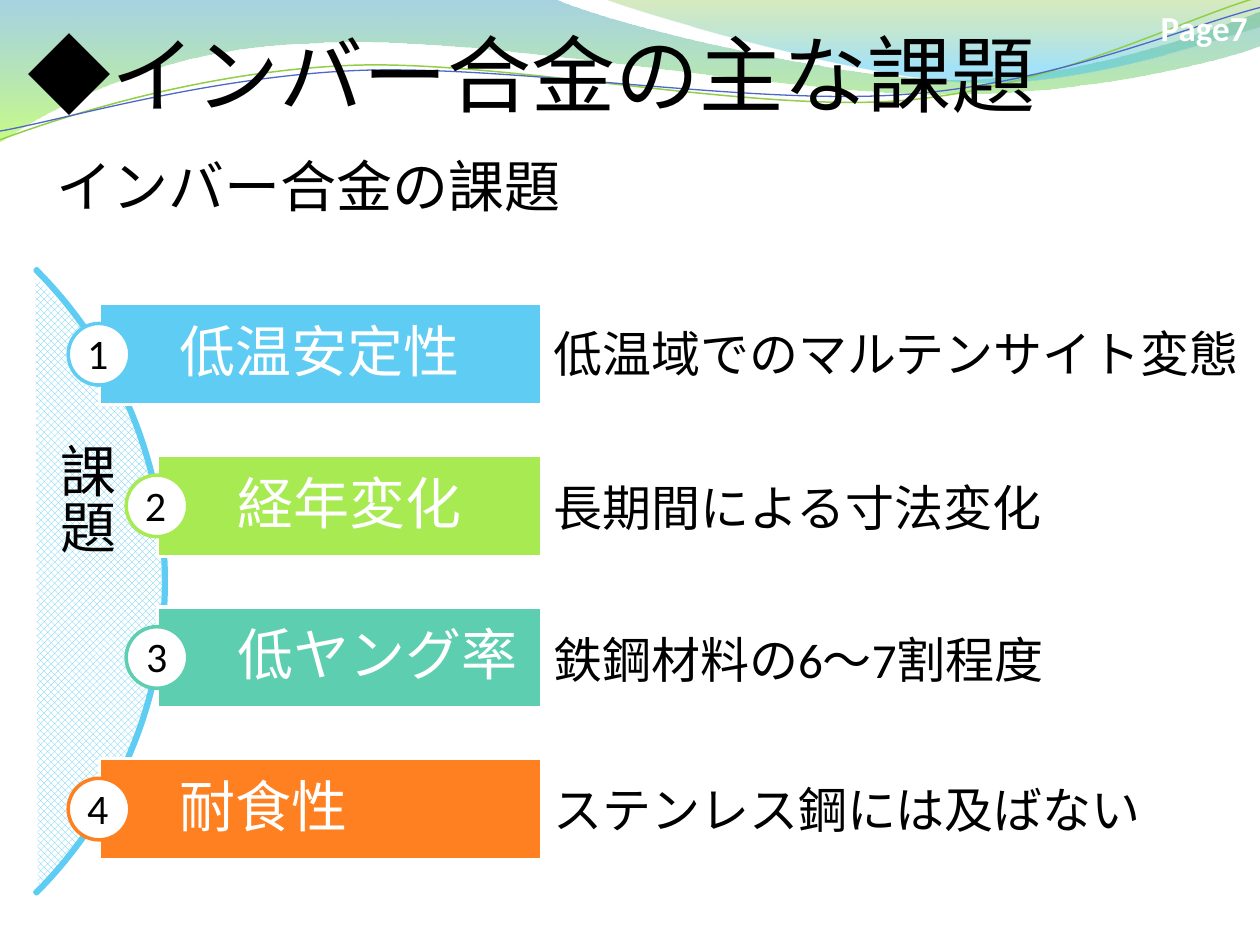
import math
from dataclasses import dataclass

import lxml.etree
import pptx
import pptx.dml.color
import pptx.enum.dml
import pptx.enum.shapes
import pptx.enum.text
import pptx.oxml.ns
import pptx.util

Pt = pptx.util.Pt
RGBColor = pptx.dml.color.RGBColor
MSO_SHAPE = pptx.enum.shapes.MSO_SHAPE
MSO_ANCHOR = pptx.enum.text.MSO_ANCHOR
PP_ALIGN = pptx.enum.text.PP_ALIGN
qn = pptx.oxml.ns.qn

BLACK = RGBColor(0x00, 0x00, 0x00)
WHITE = RGBColor(0xFF, 0xFF, 0xFF)
SKY = RGBColor(0x5E, 0xCC, 0xF3)
LIME = RGBColor(0xA7, 0xEA, 0x52)
MINT = RGBColor(0x5D, 0xCE, 0xAF)
ORANGE = RGBColor(0xFF, 0x80, 0x21)
WAVE_BLUE = RGBColor(0x3B, 0x9C, 0xBF)
WAVE_LIME = RGBColor(0x9C, 0xFA, 0x24)
WAVE_GREEN = RGBColor(0x7E, 0xBE, 0x2C)
WAVE_SKY = RGBColor(0x39, 0xC1, 0xF1)
LINE_GREEN = RGBColor(0x93, 0xCE, 0x48)
LINE_BLUE = RGBColor(0x4E, 0x67, 0xC8)

FONT = "Calibri"
ROW_TOP, ROW_STEP, BAR_HEIGHT, BAR_RIGHT = 173.6, 86.64, 57.7, 309.6
OUTER_LEFT, INNER_LEFT = 56.9, 90
BADGE = 35.2
STRAND_TURN = 357.3


@dataclass(frozen=True)
class Issue:
    name: str
    detail: str
    detail_top: float
    left: float
    number_left: float
    color: RGBColor


@dataclass(frozen=True)
class Stop:
    position: float
    color: RGBColor
    opacity: int


@dataclass(frozen=True)
class Band:
    start: tuple
    segments: tuple
    stops: tuple


@dataclass(frozen=True)
class Strand:
    start: tuple
    segments: tuple
    center: tuple
    color: RGBColor
    width: float


ISSUES = (
    Issue("低温安定性", "低温域でのマルテンサイト変態", 181.4, OUTER_LEFT, 32.4, SKY),
    Issue("経年変化", "長期間による寸法変化", 269.1, INNER_LEFT, 65.5, LIME),
    Issue("低ヤング率", "鉄鋼材料の6～7割程度", 356.4, INNER_LEFT, 66.2, MINT),
    Issue("耐食性", "ステンレス鋼には及ばない", 442.1, OUTER_LEFT, 32.4, ORANGE),
)

BANDS = (
    Band((0, 0), (
        ((316.8, -0.7),),
        ((342.7, 12.2), (478.1, 45.4), (545.8, 45.4)),
        ((614.2, 45.4), (689.8, 18.7), (720, 6.5)),
        ((720.7, 25.9),),
        ((707.8, 31.7), (626.4, 54.7), (537.1, 54)),
        ((447.8, 54), (275, 20.2), (185, 24.5)),
        ((92.9, 25.9), (33.1, 59.8), (-0.7, 81.4)),
    ), (Stop(0, WAVE_BLUE, 45), Stop(1, WAVE_LIME, 55))),
    Band((344.9, -0.7), (
        ((366.5, 7.9), (491, 44.6), (553.7, 46.8)),
        ((616.3, 49.7), (691.9, 23), (720, 15.1)),
        ((720, 0),),
    ), (Stop(0, WAVE_GREEN, 30), Stop(0.8, WAVE_SKY, 45))),
)

STRANDS = (
    Strand((0, 79.9), (
        ((34.6, 67), (113.8, 41), (199.4, 37.4)),
        ((284.4, 33.8), (427, 64.1), (513.4, 57.6)),
        ((599.8, 51.1), (675.4, 10.8), (718.6, -1.4)),
    ), (359.3, 41.4), LINE_GREEN, 0.85),
    Strand((0, 74.9), (
        ((33.8, 69.1), (118.1, 43.9), (203.8, 40.3)),
        ((290.2, 36.7), (429.8, 60.5), (516.2, 54)),
        ((601.9, 48.2), (677.5, 15.1), (720, 4.3)),
    ), (359.6, 42.5), LINE_BLUE, 0.75),
)


def turn(point: tuple, center: tuple, degrees: float) -> tuple:
    angle = math.radians(degrees)
    dx, dy = point[0] - center[0], point[1] - center[1]
    return (center[0] + dx * math.cos(angle) - dy * math.sin(angle),
            center[1] + dx * math.sin(angle) + dy * math.cos(angle))


def add_outline(s, start: tuple, segments: tuple, close: bool):
    builder = s.shapes.build_freeform(Pt(start[0]), Pt(start[1]))
    builder.add_line_segments([(Pt(x), Pt(y)) for x, y in (seg[-1] for seg in segments)],
                              close=close)
    sp = builder.convert_to_shape()
    sp.shadow.inherit = False
    steps = list(sp._element.spPr.iter(qn("a:lnTo")))
    for step, segment in zip(steps, segments):
        if len(segment) == 3:
            curve = lxml.etree.Element(qn("a:cubicBezTo"))
            for x, y in segment:
                pt = lxml.etree.SubElement(curve, qn("a:pt"))
                pt.set("x", str(Pt(x) - sp.left))
                pt.set("y", str(Pt(y) - sp.top))
            step.getparent().replace(step, curve)
    return sp


def add_band(s, band: Band) -> None:
    sp = add_outline(s, band.start, band.segments, True)
    sp.line.fill.background()
    sp.fill.gradient()
    sp.fill.gradient_angle = 270
    for gs, stop in zip(sp.fill.gradient_stops, band.stops):
        gs.position = stop.position
        gs.color.rgb = stop.color
    for clr, stop in zip(sp._element.spPr.iter(qn("a:srgbClr")), band.stops):
        lxml.etree.SubElement(clr, qn("a:alpha")).set("val", str(stop.opacity * 1000))


def add_strand(s, strand: Strand) -> None:
    start = turn(strand.start, strand.center, -STRAND_TURN)
    segments = tuple(tuple(turn(point, strand.center, -STRAND_TURN) for point in segment)
                     for segment in strand.segments)
    sp = add_outline(s, start, segments, False)
    sp.rotation = STRAND_TURN
    sp.fill.background()
    sp.line.color.rgb = strand.color
    sp.line.width = Pt(strand.width)


def add_preset(s, kind, left: float, top: float, width: float, height: float,
               line: RGBColor | None = None, fill: RGBColor | None = None):
    sp = s.shapes.add_shape(kind, Pt(left), Pt(top), Pt(width), Pt(height))
    sp.shadow.inherit = False
    if fill is None:
        sp.fill.background()
    else:
        sp.fill.solid()
        sp.fill.fore_color.rgb = fill
    if line is None:
        sp.line.fill.background()
    else:
        sp.line.color.rgb = line
        sp.line.width = Pt(2)
    return sp


def write(sp, text: str, size: float, color: RGBColor = BLACK,
          align=PP_ALIGN.LEFT, bold: bool = False):
    p = sp.text_frame.paragraphs[0]
    p.alignment = align
    r = p.add_run()
    r.text = text
    r.font.name = FONT
    r.font.size = Pt(size)
    r.font.bold = bold
    r.font.color.rgb = color
    return p


def add_label(s, text: str, left: float, top: float, width: float, height: float,
              size: float, color: RGBColor = BLACK, align=PP_ALIGN.LEFT, bold: bool = False):
    sp = s.shapes.add_textbox(Pt(left), Pt(top), Pt(width), Pt(height))
    tf = sp.text_frame
    tf.word_wrap = True
    tf.auto_size = pptx.enum.text.MSO_AUTO_SIZE.SHAPE_TO_FIT_TEXT
    write(sp, text, size, color, align, bold)
    return sp


def add_issue(s, number: int, issue: Issue) -> None:
    top = ROW_TOP + (number - 1) * ROW_STEP
    bar = add_preset(s, MSO_SHAPE.RECTANGLE, issue.left, top,
                     BAR_RIGHT - issue.left, BAR_HEIGHT, WHITE, issue.color)
    bar.text_frame.margin_left = Pt(45.6)
    bar.text_frame.vertical_anchor = MSO_ANCHOR.MIDDLE
    write(bar, issue.name, 32, WHITE).line_spacing = 0.9
    add_preset(s, MSO_SHAPE.OVAL, issue.left - BADGE / 2 - 0.3,
               top + (BAR_HEIGHT - BADGE) / 2, BADGE, BADGE, issue.color, WHITE)
    add_label(s, str(number), issue.number_left, top + 10, 46.8, 36.4, 24,
              align=PP_ALIGN.CENTER)
    add_label(s, issue.detail, 309.2, issue.detail_top, 414, 41.2, 28)


def main() -> None:
    prs = pptx.Presentation()
    prs.slide_width, prs.slide_height = Pt(720), Pt(540)
    s = prs.slides.add_slide(prs.slide_layouts[6])
    for band in BANDS:
        add_band(s, band)
    for strand in STRANDS:
        add_strand(s, strand)
    add_label(s, "◆インバー合金の主な課題", 8.6, 9.4, 635, 65.5, 48)

    chord = add_preset(s, MSO_SHAPE.CHORD, -293, 112.3, 388, 442)
    chord.adjustments[0], chord.adjustments[1] = 74.932, 141.345
    chord._element.spPr.find(qn("a:xfrm")).set("flipH", "1")
    chord.fill.patterned()
    chord.fill.pattern = pptx.enum.dml.MSO_PATTERN_TYPE.from_xml("openDmnd")
    chord.fill.fore_color.rgb = SKY
    chord.fill.back_color.rgb = WHITE
    arc = add_preset(s, MSO_SHAPE.BLOCK_ARC, -410.4, 79.5, 505.4, 505.4, SKY)
    for i, value in enumerate((189, 27, 0.003)):
        arc.adjustments[i] = value

    for number, issue in enumerate(ISSUES, 1):
        add_issue(s, number, issue)
    heading = add_label(s, "課題", 23, 246.2, 53.3, 175.7, 32, align=PP_ALIGN.CENTER)
    heading.text_frame.vertical_anchor = MSO_ANCHOR.MIDDLE
    heading.text_frame._txBody.bodyPr.set("vert", "eaVert")
    add_label(s, "インバー合金の課題", 25.4, 82.8, 652.3, 46, 32)
    add_label(s, "Page7", 649.4, 0, 70.6, 31.5, 20, WHITE, PP_ALIGN.RIGHT, True)
    prs.save("out.pptx")


if __name__ == "__main__":
    main()
